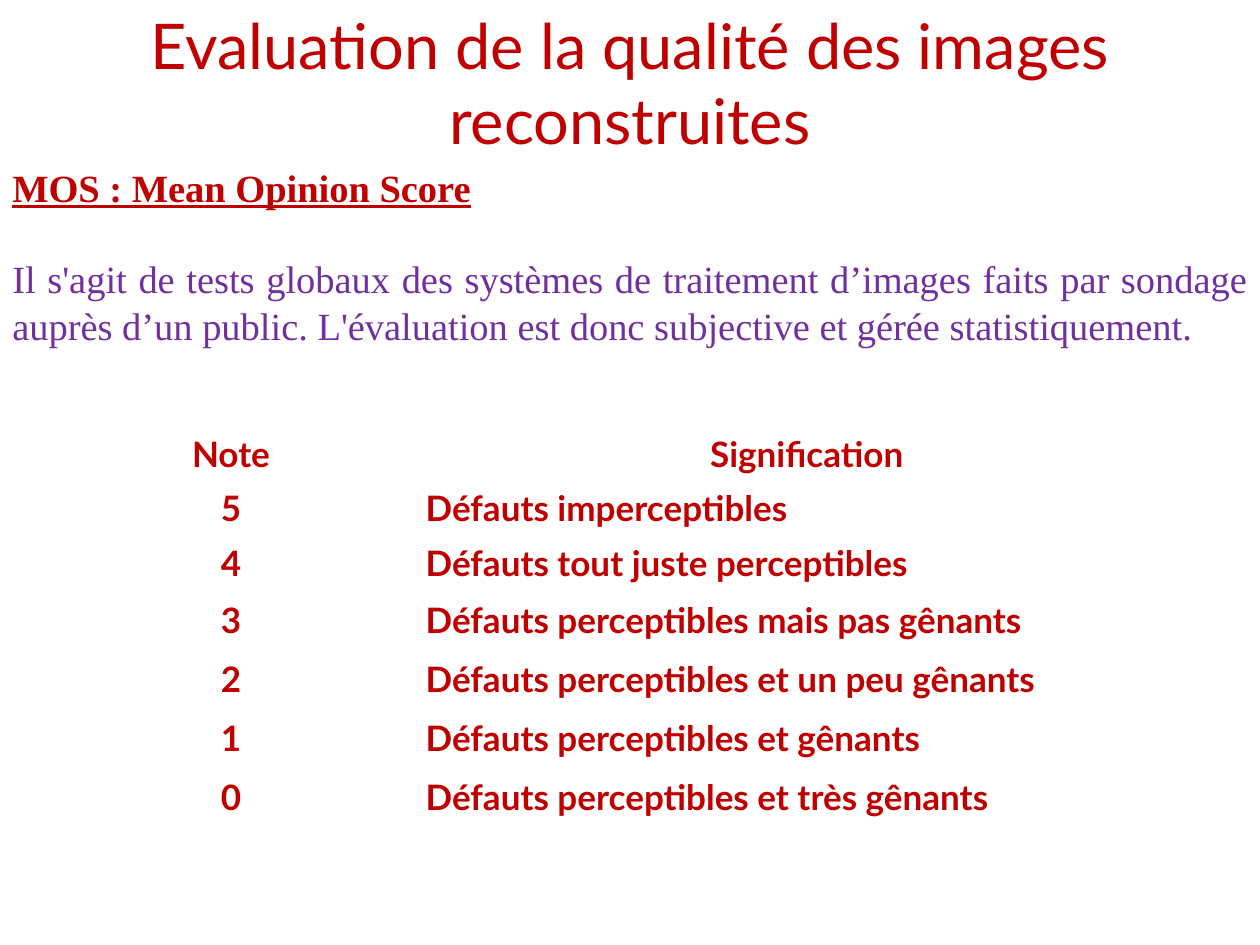
from pptx import Presentation
from pptx.dml.color import RGBColor
from pptx.enum import text
from pptx.util import Pt

COLORS = {"red": "C00000", "purple": "7030A0"}
SCORES = [
    ("Note", "Signification"),
    ("5", "Défauts imperceptibles"),
    ("4", "Défauts tout juste perceptibles"),
    ("3", "Défauts perceptibles mais pas gênants"),
    ("2", "Défauts perceptibles et un peu gênants"),
    ("1", "Défauts perceptibles et gênants"),
    ("0", "Défauts perceptibles et très gênants"),
]


def add_run(p, words, size, font, color, bold=False, underline=False):
    r = p.add_run()
    r.text = words
    r.font.size = Pt(size)
    r.font.name = font
    r.font.bold = bold
    r.font.underline = underline
    r.font.color.rgb = RGBColor.from_string(COLORS[color])


def add_text_frame(s, left, top, width, height):
    tf = s.shapes.add_textbox(Pt(left), Pt(top), Pt(width), Pt(height)).text_frame
    tf.word_wrap = True
    tf.auto_size = text.MSO_AUTO_SIZE.SHAPE_TO_FIT_TEXT
    return tf


def add_title(s, left, top, width, height):
    p = add_text_frame(s, left, top, width, height).paragraphs[0]
    p.alignment = text.PP_ALIGN.CENTER
    add_run(p, "Evaluation de la qualité des images reconstruites", 36, "Lato", "red")


def add_definition(s, left, top, width, height):
    tf = add_text_frame(s, left, top, width, height)
    font = "Times New Roman"
    add_run(tf.paragraphs[0], "MOS : Mean Opinion Score", 22, font, "red",
            bold=True, underline=True)
    p = tf.add_paragraph()
    p.alignment = text.PP_ALIGN.JUSTIFY
    p.space_before = Pt(26)
    add_run(p, "Il s'agit de tests globaux des systèmes de traitement d’images "
               "faits par sondage auprès d’un public. L'évaluation est donc "
               "subjective et gérée statistiquement.", 22, font, "purple")


def add_score_table(s, left, top, width, height):
    table = s.shapes.add_table(len(SCORES), 2, Pt(left), Pt(top),
                               Pt(width), Pt(height)).table
    table.first_row = table.horz_banding = False
    note_width = 208
    table.columns[0].width = Pt(note_width)
    table.columns[1].width = Pt(width - note_width)
    for i, row in enumerate(SCORES):
        table.rows[i].height = Pt(19.5 if i < 3 else 33.75)
        for j, words in enumerate(row):
            cell = table.cell(i, j)
            cell.fill.background()
            cell.vertical_anchor = text.MSO_ANCHOR.MIDDLE
            p = cell.text_frame.paragraphs[0]
            centred = i == 0 or j == 0
            p.alignment = text.PP_ALIGN.CENTER if centred else text.PP_ALIGN.LEFT
            add_run(p, words, 20, "Lato", "red", bold=True)


def main():
    prs = Presentation()
    prs.slide_width, prs.slide_height = Pt(720), Pt(540)
    s = prs.slides.add_slide(prs.slide_layouts[6])
    add_definition(s, 0, 90, 720, 114)
    add_title(s, 0, 0, 720, 51)
    add_score_table(s, 28, 243.5, 658, 228)
    prs.save("out.pptx")


if __name__ == "__main__":
    main()
